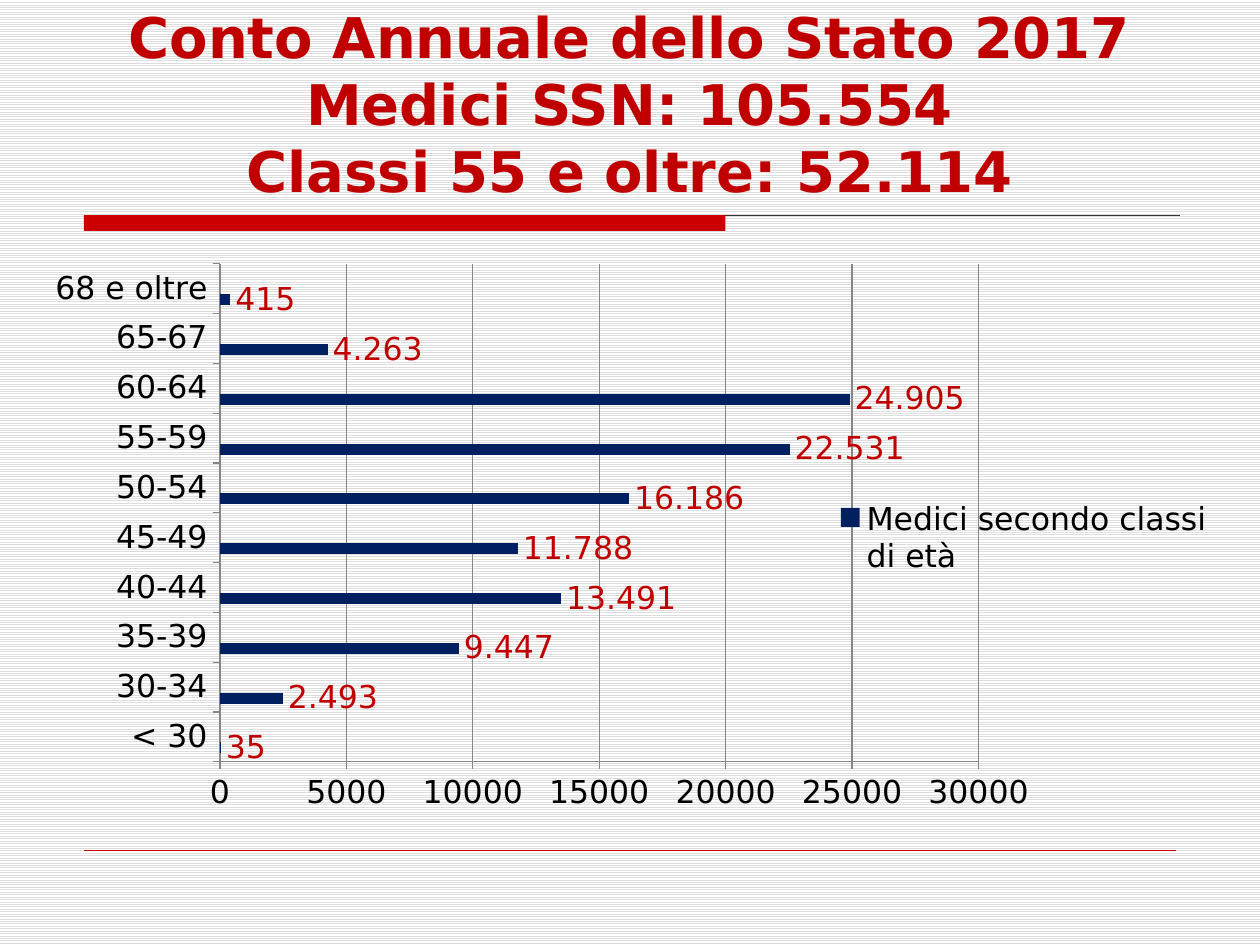
from dataclasses import dataclass

from lxml.etree import SubElement
from pptx import Presentation
from pptx.chart.data import CategoryChartData
from pptx.dml.color import RGBColor
from pptx.enum.chart import XL_CHART_TYPE, XL_LABEL_POSITION, XL_LEGEND_POSITION, XL_TICK_MARK
from pptx.enum.dml import MSO_PATTERN
from pptx.enum.shapes import MSO_CONNECTOR, MSO_SHAPE
from pptx.enum.text import MSO_ANCHOR, PP_ALIGN
from pptx.oxml import parse_xml
from pptx.oxml.ns import nsdecls, qn
from pptx.util import Pt


@dataclass(frozen=True)
class Theme:
    font: str = "DejaVu Sans"
    title_size: int = 32
    chart_size: int = 18
    text: str = "000000"
    rule: str = "333333"
    accent: str = "CC0000"
    title: str = "C00000"
    bar: str = "002060"
    grid: str = "868686"
    paper: str = "FFFFFF"
    stripe: str = "DDDDDD"


THEME = Theme()

AGES = ["< 30", "30-34", "35-39", "40-44", "45-49", "50-54", "55-59", "60-64", "65-67", "68 e oltre"]
DOCTORS = [35, 2493, 9447, 13491, 11788, 16186, 22531, 24905, 4263, 415]
TITLE = "Conto Annuale dello Stato 2017\vMedici SSN: 105.554\vClassi 55 e oltre: 52.114"


def rgb(value):
    return RGBColor.from_string(value)


def apply(target, values):
    for name, value in values.items():
        setattr(target, name, value)


def style_font(font, size, color, bold=False):
    apply(font, {"name": THEME.font, "size": Pt(size), "bold": bold})
    font.color.rgb = rgb(color)


def add_rule(s, x, y, width, color, weight):
    line = s.shapes.add_connector(MSO_CONNECTOR.STRAIGHT, Pt(x), Pt(y), Pt(x + width), Pt(y))
    line.line.color.rgb = rgb(color)
    line.line.width = Pt(weight)
    SubElement(line._element.spPr, qn("a:effectLst"))


def add_background(s):
    fill = s.background.fill
    fill.patterned()
    fill.pattern = MSO_PATTERN.LIGHT_HORIZONTAL
    fill.fore_color.rgb = rgb(THEME.stripe)
    fill.back_color.rgb = rgb(THEME.paper)


def add_title(s, x, y, width, height):
    sp = s.shapes.title
    apply(sp, {"left": Pt(x), "top": Pt(y), "width": Pt(width), "height": Pt(height)})
    tf = sp.text_frame
    tf.text = TITLE
    apply(tf, {"vertical_anchor": MSO_ANCHOR.BOTTOM, "word_wrap": True})
    p = tf.paragraphs[0]
    p.alignment = PP_ALIGN.CENTER
    for r in p.runs:
        style_font(r.font, THEME.title_size, THEME.title, True)


def add_divider(s, x, y, width, height):
    add_rule(s, x, y, width, THEME.rule, 0.75)
    band = s.shapes.add_shape(MSO_SHAPE.RECTANGLE, Pt(x), Pt(y), Pt(width * 0.585), Pt(height))
    band.shadow.inherit = False
    band.fill.solid()
    band.fill.fore_color.rgb = rgb(THEME.accent)
    band.line.fill.background()


def style_axis(axis, gridlines):
    apply(axis, {
        "has_major_gridlines": gridlines,
        "major_tick_mark": XL_TICK_MARK.OUTSIDE,
        "minor_tick_mark": XL_TICK_MARK.NONE,
    })
    lines = [axis.format.line]
    if gridlines:
        lines.append(axis.major_gridlines.format.line)
    for line in lines:
        line.color.rgb = rgb(THEME.grid)
        line.width = Pt(0.75)


def set_plot_area(chart, x, y, w, h):
    area = chart._chartSpace.chart.plotArea
    for old in area.findall(qn("c:layout")):
        area.remove(old)
    sizes = "".join(f'<c:{tag} val="{val}"/>' for tag, val in zip("xywh", (x, y, w, h)))
    area.insert(0, parse_xml(
        f'<c:layout {nsdecls("c")}><c:manualLayout><c:layoutTarget val="inner"/>'
        f'<c:xMode val="edge"/><c:yMode val="edge"/>{sizes}</c:manualLayout></c:layout>'))


def add_legend(chart, hidden):
    chart.has_legend = True
    apply(chart.legend, {"position": XL_LEGEND_POSITION.RIGHT, "include_in_layout": False})
    for index in reversed(hidden):
        chart.legend._element.insert(1, parse_xml(
            f'<c:legendEntry {nsdecls("c")}><c:idx val="{index}"/><c:delete val="1"/></c:legendEntry>'))


def label_bars(series):
    labels = series.data_labels
    apply(labels, {"show_value": True, "position": XL_LABEL_POSITION.OUTSIDE_END})
    style_font(labels.font, THEME.chart_size, THEME.title)
    for index, value in enumerate(DOCTORS):
        if value >= 1000:
            label = series.points[index].data_label
            p = label.text_frame.paragraphs[0]
            r = p.add_run()
            r.text = f"{value:,}".replace(",", ".")
            style_font(r.font, THEME.chart_size, THEME.title)
            label.position = XL_LABEL_POSITION.OUTSIDE_END


def add_age_chart(s, x, y, width, height):
    data = CategoryChartData()
    data.categories = AGES
    data.add_series("Medici secondo classi di età", DOCTORS)
    for name in ("Series 2", "Colonna2"):
        data.add_series(name, [None] * len(AGES))
    chart = s.shapes.add_chart(
        XL_CHART_TYPE.BAR_CLUSTERED, Pt(x), Pt(y), Pt(width), Pt(height), data).chart
    chart.has_title = False
    style_font(chart.font, THEME.chart_size, THEME.text)
    plot = chart.plots[0]
    apply(plot, {"gap_width": 150, "overlap": 0, "vary_by_categories": False})
    for series, color in zip(plot.series, (THEME.bar, THEME.accent, THEME.paper)):
        series.format.fill.solid()
        series.format.fill.fore_color.rgb = rgb(color)
    label_bars(plot.series[0])
    style_axis(chart.category_axis, False)
    style_axis(chart.value_axis, True)
    apply(chart.value_axis, {"minimum_scale": 0, "maximum_scale": 30000, "major_unit": 5000})
    add_legend(chart, (0, 1))
    set_plot_area(chart, 0.162, 0.033, 0.631, 0.847)


def main():
    prs = Presentation()
    apply(prs, {"slide_width": Pt(720), "slide_height": Pt(540)})
    s = prs.slides.add_slide(prs.slide_layouts[5])
    add_background(s)
    add_divider(s, 48, 123, 626.5, 9)
    add_rule(s, 48, 486, 624, THEME.accent, 0.25)
    add_title(s, 45, 24, 630, 96)
    add_age_chart(s, 14.4, 139.7, 687, 336)
    prs.save("out.pptx")


if __name__ == "__main__":
    main()
